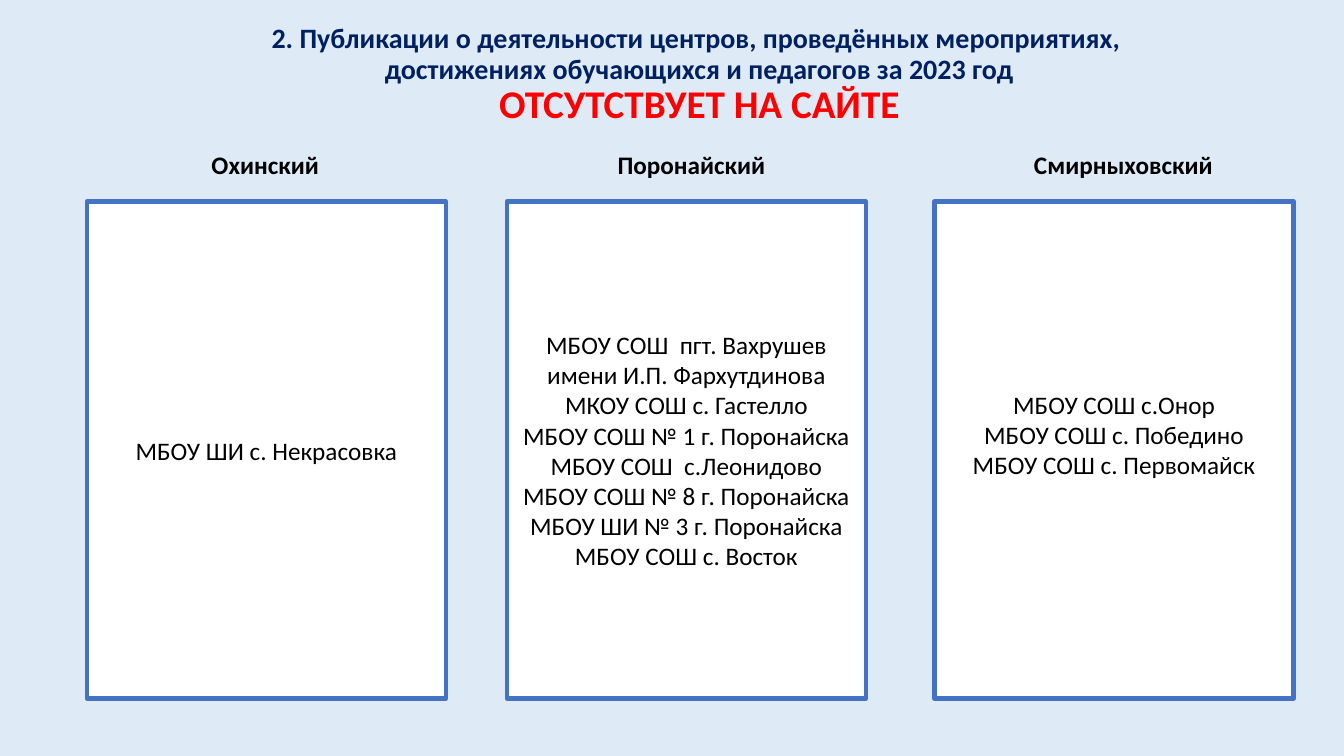
import pptx
import pptx.dml.color
import pptx.enum.shapes
import pptx.enum.text
import pptx.util

Pt = pptx.util.Pt
ALIGN = pptx.enum.text.PP_ALIGN
ANCHOR = pptx.enum.text.MSO_ANCHOR
AUTO_SIZE = pptx.enum.text.MSO_AUTO_SIZE

TITLE = [
    ("2. Публикации о деятельности центров, проведённых мероприятиях, ", 20, "002060"),
    ("достижениях обучающихся и педагогов за 2023 год", 20, "002060"),
    ("ОТСУТСТВУЕТ НА САЙТЕ", 28, "FF0000"),
]

# district, heading left, heading width, panel left, panel bottom inset, schools
DISTRICTS = [
    ("Охинский", 144, 92, 62, 3.6, ["МБОУ ШИ с. Некрасовка"]),
    ("Поронайский", 434, 121, 362, 3.6, [
        "МБОУ СОШ  пгт. Вахрушев имени И.П. Фархутдинова",
        "МКОУ СОШ с. Гастелло",
        "МБОУ СОШ № 1 г. Поронайска",
        "МБОУ СОШ  с.Леонидово",
        "МБОУ СОШ № 8 г. Поронайска",
        "МБОУ ШИ № 3 г. Поронайска",
        "МБОУ СОШ с. Восток",
    ]),
    ("Смирныховский", 731.5, 143.5, 667.5, 25.6, [
        "МБОУ СОШ с.Онор",
        "МБОУ СОШ с. Победино",
        "МБОУ СОШ с. Первомайск",
    ]),
]


def color(value):
    return pptx.dml.color.RGBColor.from_string(value)


def set_format(target, values):
    """Set every attribute named in values on target."""
    for name, value in values.items():
        setattr(target, name, value)


class SlideBuilder:
    font_name = "Calibri"
    text_color = "000000"
    line_color = "4472C4"
    panel_fill = "FFFFFF"
    text_size = 18

    def __init__(self, slide, background):
        self.slide = slide
        slide.background.fill.solid()
        slide.background.fill.fore_color.rgb = color(background)

    def fill_text(self, frame, lines, frame_format, paragraph_format, bold=False):
        """Fill a text frame with one paragraph per (text, size, colour) line."""
        set_format(frame, frame_format)
        for index, (text, size, text_color) in enumerate(lines):
            paragraph = frame.add_paragraph() if index else frame.paragraphs[0]
            set_format(paragraph, paragraph_format)
            run = paragraph.add_run()
            run.text = text
            set_format(run.font, {"name": self.font_name, "size": Pt(size), "bold": bold})
            run.font.color.rgb = color(text_color)

    def title(self, lines, left, top, width, height):
        shape = self.slide.shapes.title
        set_format(shape, {"left": Pt(left), "top": Pt(top),
                           "width": Pt(width), "height": Pt(height)})
        self.fill_text(shape.text_frame, lines,
                       {"vertical_anchor": ANCHOR.MIDDLE, "word_wrap": True,
                        "auto_size": AUTO_SIZE.NONE},
                       {"alignment": ALIGN.CENTER, "line_spacing": 0.9}, bold=True)

    def heading(self, text, left, top, width, height):
        shape = self.slide.shapes.add_textbox(Pt(left), Pt(top), Pt(width), Pt(height))
        self.fill_text(shape.text_frame, [(text, self.text_size, self.text_color)],
                       {"word_wrap": False, "auto_size": AUTO_SIZE.SHAPE_TO_FIT_TEXT},
                       {"alignment": ALIGN.LEFT}, bold=True)

    def panel(self, texts, left, top, width, height, bottom_inset):
        shape = self.slide.shapes.add_shape(
            pptx.enum.shapes.MSO_SHAPE.RECTANGLE,
            Pt(left), Pt(top), Pt(width), Pt(height))
        shape.shadow.inherit = False
        shape.fill.solid()
        shape.fill.fore_color.rgb = color(self.panel_fill)
        shape.line.color.rgb = color(self.line_color)
        shape.line.width = Pt(3)
        self.fill_text(shape.text_frame,
                       [(text, self.text_size, self.text_color) for text in texts],
                       {"vertical_anchor": ANCHOR.MIDDLE, "word_wrap": True,
                        "margin_bottom": Pt(bottom_inset)},
                       {"alignment": ALIGN.CENTER})


def main():
    presentation = pptx.Presentation()
    set_format(presentation, {"slide_width": Pt(960), "slide_height": Pt(540)})
    title_only = presentation.slide_layouts[5]
    builder = SlideBuilder(presentation.slides.add_slide(title_only), "DEEBF7")

    builder.title(TITLE, 62, 5.8, 875, 97)
    for name, heading_left, heading_width, panel_left, inset, schools in DISTRICTS:
        builder.panel(schools, panel_left, 144, 256.5, 355, inset)
        builder.heading(name, heading_left, 103, heading_width, 29)

    presentation.save("out.pptx")


if __name__ == "__main__":
    main()
